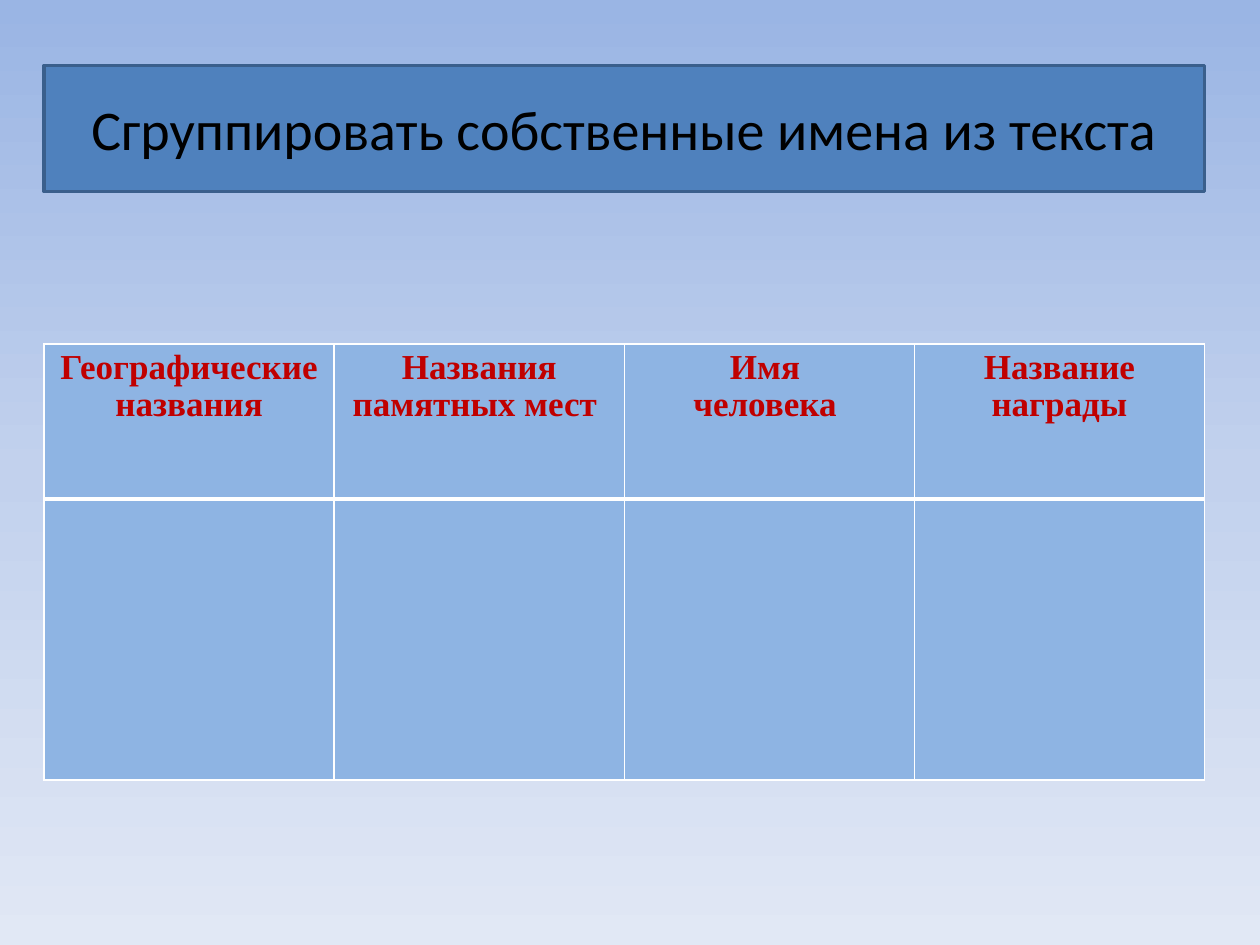
import copy
from dataclasses import dataclass

import pptx
import pptx.dml.color
import pptx.enum.text
import pptx.oxml
import pptx.oxml.ns
import pptx.presentation
import pptx.slide
import pptx.table
import pptx.util
from pptx.util import Inches

LEFT, WIDTH = 0.35, 9.21
ROW_HEIGHTS = (1.23, 2.23)
CENTER = pptx.enum.text.PP_ALIGN.CENTER
MIDDLE = pptx.enum.text.MSO_ANCHOR.MIDDLE


@dataclass
class Style:
    font: str
    size: int
    color: str
    bold: bool = False


@dataclass
class Column:
    lines: tuple[str, ...]


TITLE_STYLE = Style("Calibri", 32, "000000")
HEADER_STYLE = Style("Times New Roman", 20, "C00000", True)
BACKGROUND_STOPS = ((0, "9AB5E4"), (0.5, "C2D1ED"), (1, "E1E8F5"))
COLUMNS = (
    Column(("Географические названия",)),
    Column(("Названия памятных мест ",)),
    Column(("Имя ", "человека ")),
    Column(("Название награды",)),
)


def rgb(color: str) -> pptx.dml.color.RGBColor:
    return pptx.dml.color.RGBColor.from_string(color)


def write_lines(frame, lines: tuple[str, ...], style: Style, spacing: float = 1.0) -> None:
    for index, line in enumerate(lines):
        para = frame.add_paragraph() if index else frame.paragraphs[0]
        para.alignment = CENTER
        para.line_spacing = spacing
        span = para.add_run()
        span.text = line
        span.font.name = style.font
        span.font.size = pptx.util.Pt(style.size)
        span.font.bold = style.bold
        span.font.color.rgb = rgb(style.color)


def paint_background(page: pptx.slide.Slide) -> None:
    fill = page.background.fill
    fill.gradient()
    fill.gradient_angle = 270  # counter-clockwise: runs from top to bottom
    last = page.background._cSld.findall(".//" + pptx.oxml.ns.qn("a:gs"))[-1]
    last.addprevious(copy.deepcopy(last))
    for stop, (position, color) in zip(fill.gradient_stops, BACKGROUND_STOPS):
        stop.position = position
        stop.color.rgb = rgb(color)


def add_title(page: pptx.slide.Slide, text: str) -> None:
    box = page.shapes.title
    box.left, box.top = Inches(LEFT), Inches(0.52)
    box.width, box.height = Inches(WIDTH), Inches(1)
    box.fill.solid()
    box.fill.fore_color.rgb = rgb("4F81BD")
    box.line.color.rgb = rgb("3A5F8C")
    box.line.width = pptx.util.Pt(2)
    box.text_frame.vertical_anchor = MIDDLE
    write_lines(box.text_frame, (text,), TITLE_STYLE)


def set_borders(cell: pptx.table._Cell, widths: dict[str, int]) -> None:
    properties = cell._tc.get_or_add_tcPr()
    for index, (side, width) in enumerate(widths.items()):
        border = pptx.oxml.parse_xml(
            f'<a:{side} {pptx.oxml.ns.nsdecls("a")} w="{pptx.util.Pt(width)}">'
            '<a:solidFill><a:srgbClr val="FFFFFF"/></a:solidFill>'
            f'</a:{side}>'
        )
        properties.insert(index, border)


def add_names_table(page: pptx.slide.Slide) -> None:
    table = page.shapes.add_table(
        len(ROW_HEIGHTS), len(COLUMNS),
        Inches(LEFT), Inches(2.73), Inches(WIDTH), Inches(sum(ROW_HEIGHTS)),
    ).table
    for row, height in zip(table.rows, ROW_HEIGHTS):
        row.height = Inches(height)
    for cell in table.iter_cells():
        cell.fill.solid()
        cell.fill.fore_color.rgb = rgb("8EB4E3")

    # A thick rule parts the headings from the empty answer row
    for index, column in enumerate(COLUMNS):
        header, answer = table.cell(0, index), table.cell(1, index)
        write_lines(header.text_frame, column.lines, HEADER_STYLE, 0.95)
        set_borders(header, {"lnL": 1, "lnR": 1, "lnT": 1, "lnB": 3})
        set_borders(answer, {"lnL": 1, "lnR": 1, "lnT": 3, "lnB": 1})


def main() -> None:
    deck = pptx.Presentation()
    deck.slide_width, deck.slide_height = Inches(10), Inches(7.5)
    page = deck.slides.add_slide(deck.slide_layouts.get_by_name("Title Only"))
    paint_background(page)
    add_title(page, "Сгруппировать собственные имена из текста")
    add_names_table(page)
    deck.save("out.pptx")


if __name__ == "__main__":
    main()
